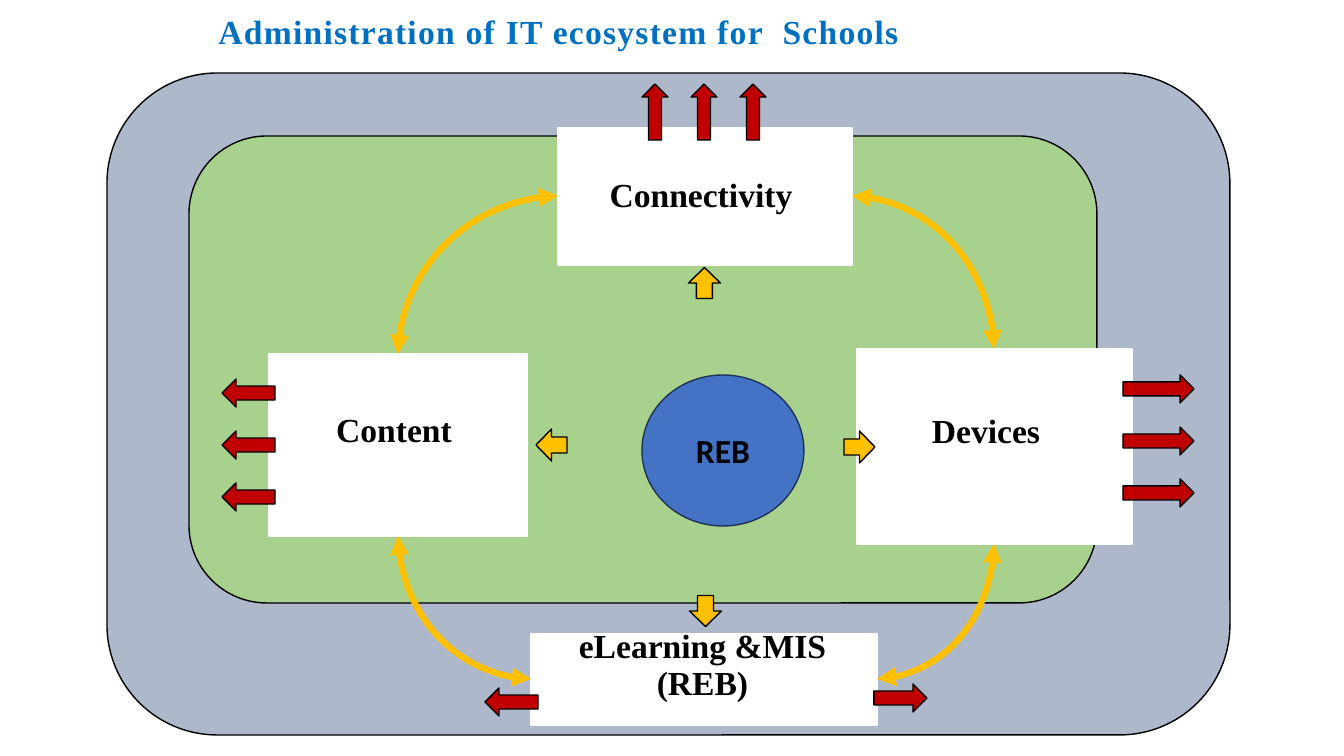
"""Build the slide on administering the IT ecosystem for schools."""
import dataclasses

import lxml.etree
import pptx
import pptx.dml.color
import pptx.enum.shapes
import pptx.enum.text
import pptx.oxml.ns
import pptx.shapes.autoshape
import pptx.slide
import pptx.util

EMU_PER_PX = 914400 / 100.8
COLOURS = {
    "grey": "ADB9CA", "green": "A9D18E", "white": "FFFFFF", "black": "000000",
    "red": "C00000", "amber": "FFC000", "blue": "4472C4", "navy": "1E3256",
    "title": "0070C0",
}
SHAPES = pptx.enum.shapes.MSO_SHAPE


@dataclasses.dataclass(frozen=True)
class Block:
    left: int
    top: int
    width: int
    height: int
    label: str = ""
    right_inset: int = 3
    bottom_inset: int = 3

    @property
    def right(self) -> int:
        return self.left + self.width

    @property
    def bottom(self) -> int:
        return self.top + self.height

    @property
    def centre(self) -> tuple[int, int]:
        return self.left + self.width // 2, self.top + self.height // 2


@dataclasses.dataclass(frozen=True)
class ArrowRow:
    first: Block
    rotation: int
    fill: str
    count: int = 1
    step_x: int = 0
    step_y: int = 0


OUTER = Block(107, 73, 1123, 662)
INNER = Block(189, 136, 908, 467)
CONNECTIVITY = Block(558, 128, 294, 137, "Connectivity", 11)
DEVICES = Block(857, 349, 275, 195, "Devices", 20, 30)
LEARNING = Block(531, 634, 346, 91, "eLearning &MIS (REB)", 6, 30)
CONTENT = Block(269, 354, 258, 182, "Content", 11, 30)
HUB = Block(642, 375, 162, 151)
TITLE = Block(12, 6, 1094, 50)

CURVES = [
    ((CONNECTIVITY.left, CONNECTIVITY.centre[1]), (CONTENT.centre[0], CONTENT.top)),
    ((CONNECTIVITY.right, CONNECTIVITY.centre[1]), (DEVICES.centre[0], DEVICES.top)),
    ((LEARNING.right, LEARNING.centre[1]), (DEVICES.centre[0], DEVICES.bottom)),
    ((LEARNING.left, LEARNING.centre[1]), (CONTENT.centre[0], CONTENT.bottom)),
]
ARROWS = [
    ArrowRow(Block(1123, 375, 71, 28), 0, "red", 3, step_y=52),
    ArrowRow(Block(627, 99, 56, 26), 270, "red", 3, step_x=49),
    ArrowRow(Block(222, 379, 53, 28), 180, "red", 3, step_y=52),
    ArrowRow(Block(874, 684, 53, 28), 0, "red"),
    ArrowRow(Block(485, 688, 53, 28), 180, "red"),
    ArrowRow(Block(844, 431, 31, 32), 0, "amber"),
    ArrowRow(Block(536, 429, 31, 32), 180, "amber"),
    ArrowRow(Block(689, 267, 31, 32), 270, "amber"),
    ArrowRow(Block(690, 595, 31, 32), 90, "amber"),
]


def px(length: int) -> pptx.util.Emu:
    return pptx.util.Emu(round(length * EMU_PER_PX))


def place(block: Block) -> list[pptx.util.Emu]:
    return [px(side) for side in (block.left, block.top, block.width, block.height)]


def colour(name: str) -> pptx.dml.color.RGBColor:
    return pptx.dml.color.RGBColor.from_string(COLOURS[name])


def write(box: pptx.shapes.autoshape.Shape, text: str, *,
          font: str = "Times New Roman", fill: str = "black",
          line_spacing: float = 1.0, tracking: int = 0) -> None:
    box.text_frame.word_wrap = True
    para = box.text_frame.paragraphs[0]
    para.alignment = pptx.enum.text.PP_ALIGN.CENTER
    para.line_spacing = line_spacing
    span = para.add_run()
    span.text = text
    span.font.name = font
    span.font.size = pptx.util.Pt(24)
    span.font.bold = True
    span.font.color.rgb = colour(fill)
    if tracking:
        span.font._element.set("spc", str(tracking))


def draw_shape(page: pptx.slide.Slide, kind: SHAPES, block: Block, fill: str,
               line: str = "black") -> pptx.shapes.autoshape.Shape:
    shape = page.shapes.add_shape(kind, *place(block))
    shape.shadow.inherit = False
    shape.fill.solid()
    shape.fill.fore_color.rgb = colour(fill)
    shape.line.color.rgb = colour(line)
    shape.line.width = pptx.util.Pt(1)
    return shape


def draw_topic(page: pptx.slide.Slide, topic: Block) -> None:
    box = draw_shape(page, SHAPES.RECTANGLE, topic, "white", "white")
    frame = box.text_frame
    frame.vertical_anchor = pptx.enum.text.MSO_ANCHOR.MIDDLE
    frame.margin_left = frame.margin_top = px(3)
    frame.margin_right = px(topic.right_inset)
    frame.margin_bottom = px(topic.bottom_inset)
    write(box, topic.label, line_spacing=0.9)


def draw_curve(page: pptx.slide.Slide, start: tuple[int, int],
               end: tuple[int, int]) -> None:
    curve = page.shapes.add_connector(
        pptx.enum.shapes.MSO_CONNECTOR.CURVE, *map(px, start + end))
    curve.line.color.rgb = colour("amber")
    curve.line.width = pptx.util.Pt(4.5)
    properties = curve._element.spPr
    qn = pptx.oxml.ns.qn
    properties.find(qn("a:prstGeom")).set("prst", "curvedConnector2")
    for tip in ("a:headEnd", "a:tailEnd"):
        lxml.etree.SubElement(properties.find(qn("a:ln")), qn(tip), type="triangle")
    lxml.etree.SubElement(properties, qn("a:effectLst"))


def draw_arrows(page: pptx.slide.Slide, row: ArrowRow) -> None:
    for index in range(row.count):
        block = dataclasses.replace(
            row.first,
            left=row.first.left + index * row.step_x,
            top=row.first.top + index * row.step_y)
        arrow = draw_shape(page, SHAPES.RIGHT_ARROW, block, row.fill)
        arrow.rotation = row.rotation


def main() -> None:
    deck = pptx.Presentation()
    deck.slide_width, deck.slide_height = px(1344), px(756)
    page = deck.slides.add_slide(deck.slide_layouts[6])
    draw_shape(page, SHAPES.ROUNDED_RECTANGLE, OUTER, "grey")
    draw_shape(page, SHAPES.ROUNDED_RECTANGLE, INNER, "green")
    for topic in (CONNECTIVITY, DEVICES, LEARNING, CONTENT):
        draw_topic(page, topic)
    for start, end in CURVES:
        draw_curve(page, start, end)
    for row in ARROWS:
        draw_arrows(page, row)
    title = page.shapes.add_textbox(*place(TITLE))
    write(title, "Administration of IT ecosystem for  Schools", fill="title", tracking=90)
    hub = draw_shape(page, SHAPES.OVAL, HUB, "blue", "navy")
    hub.text_frame.vertical_anchor = pptx.enum.text.MSO_ANCHOR.MIDDLE
    write(hub, "REB", font="Calibri")
    deck.save("out.pptx")


if __name__ == "__main__":
    main()
